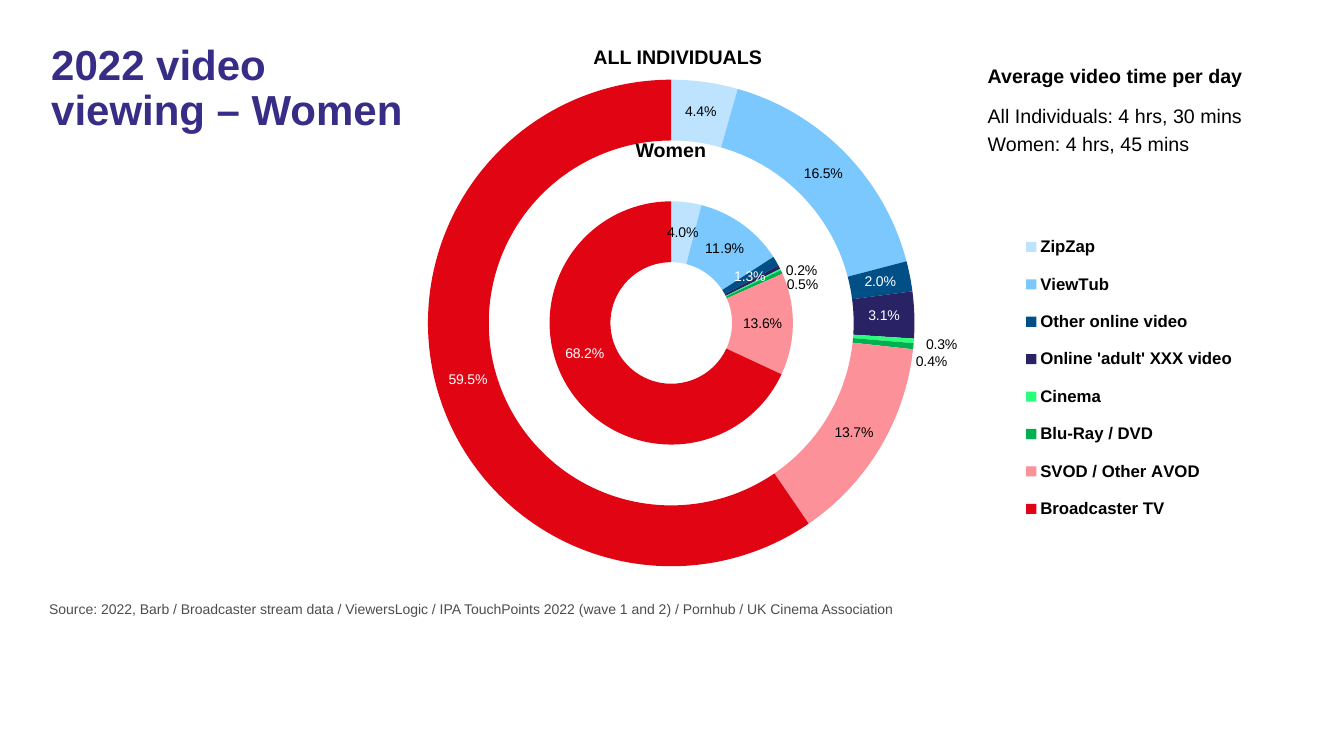
from lxml import etree
from pptx import Presentation
from pptx.chart import data as chart_data
from pptx.dml.color import RGBColor
from pptx.enum import chart as chart_enum, text as text_enum
from pptx.oxml import parse_xml
from pptx.oxml.ns import nsdecls, qn
from pptx.util import Pt

FONT = "Arial"
COLORS = {
    "title": "372D87", "black": "000000", "white": "FFFFFF", "source": "4D4D4D",
    "clips": "BDE3FF", "sharing": "7BC8FF", "online": "004F87", "adult": "292265",
    "cinema": "2AFF7C", "disc": "00B050", "svod": "FD9199", "broadcast": "E10514",
}
# category, segment colour, label colour, women %, all individuals %
VIEWING = [
    ("ZipZap", "clips", "black", 4, 4.4),
    ("ViewTub", "sharing", "black", 11.9, 16.5),
    ("Other online video", "online", "white", 1.3, 2),
    ("Online 'adult' XXX video", "adult", "white", 0.5, 3.1),
    ("Cinema", "cinema", "black", 0.2, 0.3),
    ("Blu-Ray / DVD", "disc", "black", 0.5, 0.4),
    ("SVOD / Other AVOD", "svod", "black", 13.6, 13.7),
    ("Broadcaster TV", "broadcast", "white", 68.2, 59.5),
]
CATEGORIES, SEGMENTS, LABEL_COLORS, WOMEN, EVERYONE = zip(*VIEWING)
# label shifts by category index, as shares of the chart's size
WOMEN_SHIFTS = {4: (0.05, -0.02), 5: (0.05, 0), 7: (-0.01, -0.03)}
EVERYONE_SHIFTS = {4: (0.06, 0.01), 5: (0.05, 0.03), 7: (0, -0.01)}
LABEL_FORMAT = r"0.0\%"


def rgb(name):
    return RGBColor.from_string(COLORS[name])


def add_text(slide, box, content, size=14, color="black", bold=False,
             align=text_enum.PP_ALIGN.LEFT, line_spacing=None):
    frame = slide.shapes.add_textbox(*map(Pt, box)).text_frame
    frame.word_wrap = True
    paragraph = frame.paragraphs[0]
    paragraph.alignment = align
    paragraph.line_spacing = line_spacing
    run = paragraph.add_run()
    run.text = content
    run.font.name, run.font.size, run.font.bold = FONT, Pt(size), bold
    run.font.color.rgb = rgb(color)


def manual_layout(x, y, w, h, target=""):
    """Return a c:layout element with a box given as shares of the chart."""
    return parse_xml(
        f'<c:layout {nsdecls("c")}><c:manualLayout>{target}'
        '<c:xMode val="edge"/><c:yMode val="edge"/>'
        f'<c:x val="{x}"/><c:y val="{y}"/><c:w val="{w}"/><c:h val="{h}"/>'
        '</c:manualLayout></c:layout>')


def segment_label(index, color, shift):
    """Return a c:dLbl element with its own colour and, if any, a shift."""
    layout = ""
    if shift:
        layout = ('<c:layout><c:manualLayout>'
                  f'<c:x val="{shift[0]}"/><c:y val="{shift[1]}"/>'
                  '</c:manualLayout></c:layout>')
    shown = "".join(
        f'<c:show{part} val="{int(part == "Val")}"/>'
        for part in ("LegendKey", "Val", "CatName", "SerName", "Percent", "BubbleSize"))
    return parse_xml(
        f'<c:dLbl {nsdecls("c", "a")}><c:idx val="{index}"/>{layout}'
        f'<c:numFmt formatCode="{LABEL_FORMAT}" sourceLinked="0"/>'
        '<c:spPr><a:noFill/><a:ln><a:noFill/></a:ln></c:spPr>'
        '<c:txPr><a:bodyPr/><a:p><a:pPr><a:defRPr sz="1000" b="0"><a:solidFill>'
        f'<a:srgbClr val="{COLORS[color]}"/></a:solidFill><a:latin typeface="{FONT}"/>'
        f'</a:defRPr></a:pPr><a:endParaRPr lang="en-GB"/></a:p></c:txPr>{shown}</c:dLbl>')


def format_ring(series, shifts, unlabelled=()):
    for index, segment in enumerate(SEGMENTS):
        area = series.points[index].format
        area.fill.solid()
        area.fill.fore_color.rgb = rgb(segment)
        area.line.fill.background()
    labels = series.data_labels
    labels.show_value = True
    labels.show_percentage = False
    labels.number_format, labels.number_format_is_linked = LABEL_FORMAT, False
    labels.font.name, labels.font.size = FONT, Pt(10)
    labels.font.color.rgb = rgb("white")
    group = labels._element
    for leader in group.findall(qn("c:showLeaderLines")):
        leader.set("val", "0")
    for index, color in enumerate(LABEL_COLORS):
        if index in unlabelled:
            label = parse_xml(f'<c:dLbl {nsdecls("c")}><c:idx val="{index}"/>'
                              '<c:delete val="1"/></c:dLbl>')
        else:
            label = segment_label(index, color, shifts.get(index))
        group.insert(index, label)


def add_viewing_rings(slide, box):
    viewing = chart_data.CategoryChartData()
    viewing.categories = CATEGORIES
    viewing.add_series("Women", WOMEN)
    viewing.add_series("Gap", [None] * len(CATEGORIES))
    viewing.add_series("All individuals", EVERYONE)
    chart = slide.shapes.add_chart(
        chart_enum.XL_CHART_TYPE.DOUGHNUT, *map(Pt, box), viewing).chart
    chart.has_title = False
    chart.font.name, chart.font.size = FONT, Pt(18)
    chart.font.color.rgb = rgb("black")
    plot = chart.plots[0]
    plot.vary_by_categories = True
    women, _, everyone = plot.series
    format_ring(women, WOMEN_SHIFTS, unlabelled=(3,))
    format_ring(everyone, EVERYONE_SHIFTS)

    doughnut = plot._element
    doughnut.find(qn("c:holeSize")).set("val", "47")
    plot_area = doughnut.getparent()
    for layout in plot_area.findall(qn("c:layout")):
        plot_area.remove(layout)
    plot_area.insert(0, manual_layout(0.11, 0.095, 0.503, 0.811,
                                      '<c:layoutTarget val="inner"/>'))

    chart.has_legend = True
    legend = chart.legend
    legend.position = chart_enum.XL_LEGEND_POSITION.RIGHT
    legend.include_in_layout = False
    legend.font.name, legend.font.size, legend.font.bold = FONT, Pt(12), True
    legend.font.color.rgb = rgb("black")
    for layout in legend._element.findall(qn("c:layout")):
        legend._element.remove(layout)
    legend._element.find(qn("c:legendPos")).addnext(manual_layout(0.7, 0.33, 0.27, 0.52))

    left, top, width, _ = box
    center = left + width * 0.361
    for name, offset in (("ALL INDIVIDUALS", 17.3), ("Women", 83.5)):
        shift = 5 if name == "ALL INDIVIDUALS" else 0
        add_text(slide, (center - 70 + shift, top + offset, 140, 24), name, bold=True,
                 align=text_enum.PP_ALIGN.CENTER)


def add_daily_averages(slide, box):
    left, top, width, height = box
    lines = (("Average video time per day", 0, True),
             ("All Individuals: 4 hrs, 30 mins", 29, False),
             ("Women: 4 hrs, 45 mins", 49, False))
    for content, offset, bold in lines:
        add_text(slide, (left, top + offset, width, height / 3), content, bold=bold)


def main():
    deck = Presentation()
    deck.slide_width, deck.slide_height = Pt(960), Pt(540)
    slide = deck.slides.add_slide(deck.slide_layouts[6])
    add_viewing_rings(slide, (229.7, 11.5, 691, 438))
    add_text(slide, (29.5, 28, 275, 199), "2022 video viewing – Women", size=30,
             color="title", bold=True, line_spacing=0.9)
    add_daily_averages(slide, (698.4, 42, 250, 73))
    add_text(slide, (28, 425.5, 893, 24),
             "Source: 2022, Barb / Broadcaster stream data / ViewersLogic / "
             "IPA TouchPoints 2022 (wave 1 and 2) / Pornhub / UK Cinema Association",
             size=10, color="source")
    deck.save("out.pptx")


if __name__ == "__main__":
    main()
